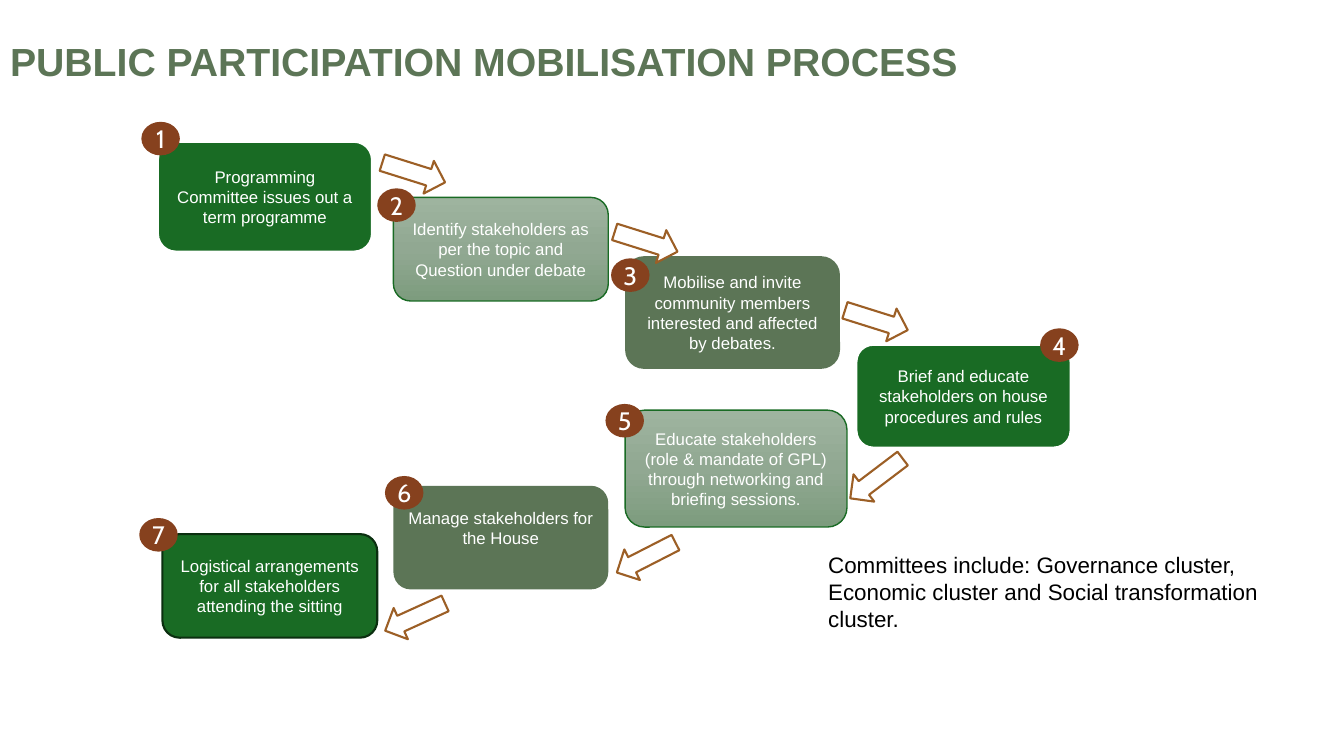
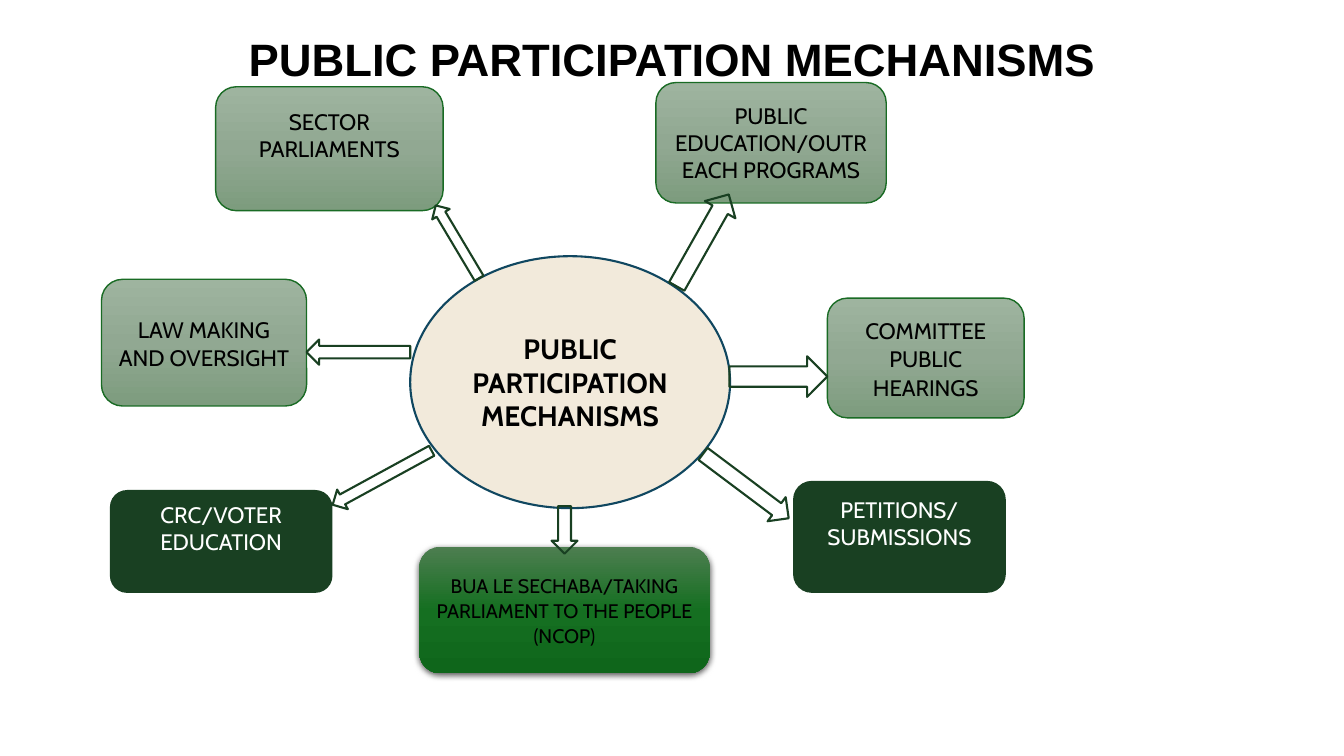
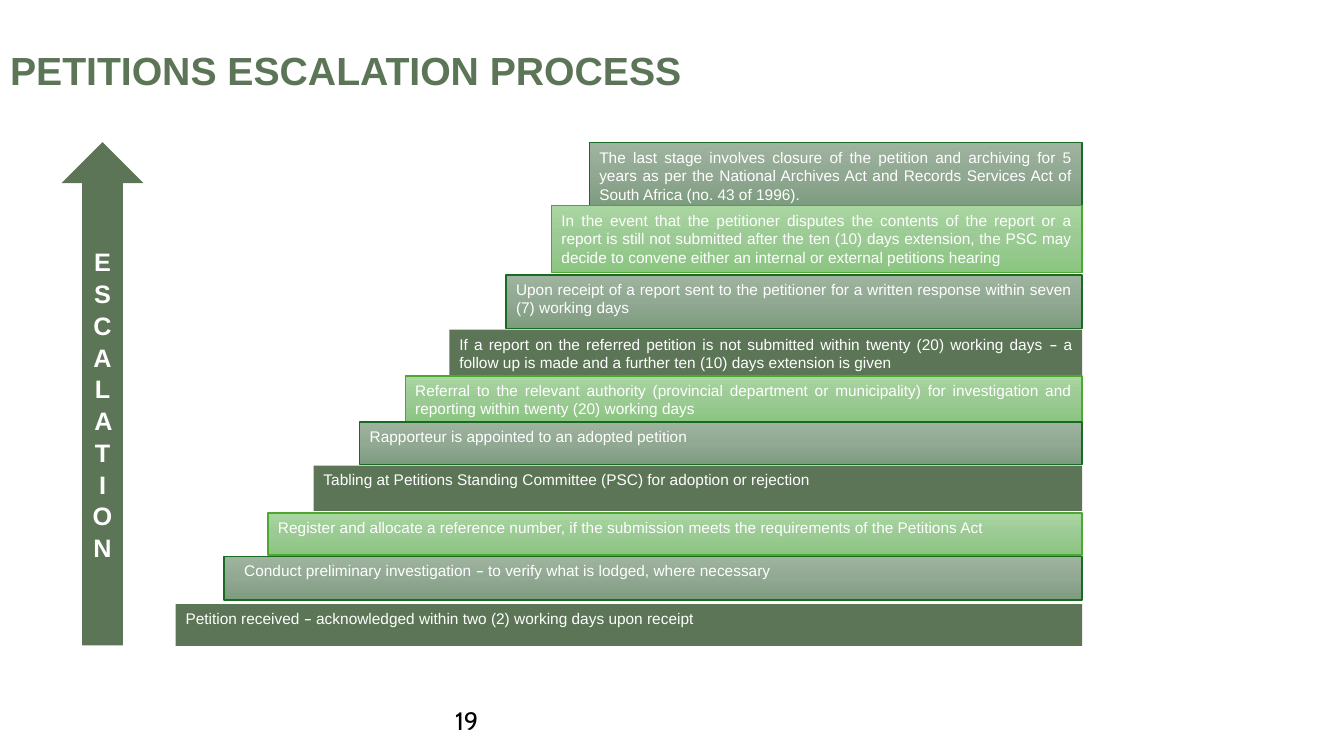
from dataclasses import dataclass

from pptx import Presentation
from pptx.dml.color import RGBColor
from pptx.enum import shapes as kinds, text as txt
from pptx.oxml import parse_xml
from pptx.oxml.ns import nsdecls, qn
from pptx.util import Pt


@dataclass(frozen=True)
class Theme:
    white: str = "FFFFFF"
    black: str = "000000"
    green: str = "196B24"
    dark_green: str = "0B2F10"
    forest: str = "194022"
    moss: str = "5C7556"
    lime: str = "4EA72E"
    rust: str = "86411E"
    ochre: str = "9C5F26"
    cream: str = "F2EADB"
    navy: str = "104760"
    sage_fade: tuple = ("9EB49F", "91A892", "7D9C7E")
    lime_fade: tuple = ("A8D5A0", "9CCA94", "8AC680")
    green_fade: tuple = ("4D7E50", "156F21", "0F661B")
    body_font: str = "Arial"
    accent_font: str = "Cabin"
    title: float = 28
    big_title: float = 32.4
    hub: float = 20
    label: float = 18
    mechanism: float = 16
    small_mechanism: float = 14
    step: float = 12
    stage: float = 11


T = Theme()
# Box styles: fill, line colour, line width
SAGE = (T.sage_fade, T.green, 1)
LIME = (T.lime_fade, T.lime, 1)
MOSS = (T.moss, None, 0)
GREEN = (T.green, T.white, 2)
GREEN_EDGED = (T.green, T.dark_green, 1.5)
FOREST = (T.forest, None, 0)
GLOSS = (T.green_fade, None, 0)

SHAPE = kinds.MSO_SHAPE
LEFT, CENTER, JUSTIFY = txt.PP_ALIGN.LEFT, txt.PP_ALIGN.CENTER, txt.PP_ALIGN.JUSTIFY
TOP, MIDDLE = txt.MSO_ANCHOR.TOP, txt.MSO_ANCHOR.MIDDLE


def add_block(slide, kind, box, style, rotation=0):
    """Add a preset shape; a tuple as fill means a top-to-bottom fade."""
    block = slide.shapes.add_shape(kind, *map(Pt, box))
    block.shadow.inherit = False
    block.rotation = rotation
    fill, line, width = style
    if fill is None:
        block.fill.background()
    elif isinstance(fill, tuple):
        stops = "".join(f'<a:gs pos="{i * 50000}"><a:srgbClr val="{color}"/></a:gs>'
                        for i, color in enumerate(fill))
        fade = parse_xml(f'<a:gradFill {nsdecls("a")} rotWithShape="1"><a:gsLst>{stops}</a:gsLst>'
                         '<a:lin ang="5400000" scaled="0"/></a:gradFill>')
        block._element.spPr.find(qn("a:prstGeom")).addnext(fade)
    else:
        block.fill.solid()
        block.fill.fore_color.rgb = RGBColor.from_string(fill)
    if line is None:
        block.line.fill.background()
    else:
        block.line.color.rgb = RGBColor.from_string(line)
        block.line.width = Pt(width)
    return block


def write(target, words, size, color, font=T.body_font, bold=False,
          align=CENTER, anchor=MIDDLE, spacing=None):
    """Fill a shape with one paragraph; a dash is set in the accent font."""
    frame = target.text_frame
    frame.word_wrap = True
    frame.auto_size = txt.MSO_AUTO_SIZE.NONE
    frame.vertical_anchor = anchor
    paragraph = frame.paragraphs[0]
    paragraph.alignment = align
    if spacing:
        paragraph.line_spacing = spacing
    paragraph.font.size = Pt(size)
    paragraph.font.name = font
    paragraph.font.bold = bold
    paragraph.font.color.rgb = RGBColor.from_string(color)
    for piece in words.partition("–"):
        if piece:
            run = paragraph.add_run()
            run.text = piece
            if piece == "–":
                run.font.name = T.accent_font
    return frame


deck = Presentation()
deck.slide_width, deck.slide_height = Pt(960), Pt(540)

# Slides and titles: text, box, size, colour, alignment, line spacing
titles = [
    ("PUBLIC PARTICIPATION MOBILISATION PROCESS", (0, 12, 960, 68.5), T.title, T.moss, LEFT, 0.85),
    ("PUBLIC PARTICIPATION MECHANISMS", (48, 21.5, 864, 46), T.big_title, T.black, CENTER, 0.9),
    ("PETITIONS ESCALATION PROCESS", (0, 21.5, 960, 60.5), T.title, T.moss, LEFT, 0.9),
]
pages = []
for words, box, size, color, align, spacing in titles:
    page = deck.slides.add_slide(deck.slide_layouts[5])
    heading = page.shapes.title
    heading.left, heading.top, heading.width, heading.height = map(Pt, box)
    write(heading, words, size, color, bold=True, align=align, spacing=spacing)
    pages.append(page)
mobilisation, mechanisms, escalation = pages

# Mobilisation: steps with box, style, badge position
steps = [
    ("Programming Committee issues out a term programme", (112.5, 101, 153.5, 79), GREEN, (101, 87)),
    ("Identify stakeholders as per the topic and Question under debate",
     (281, 141, 153.5, 74), SAGE, (269.5, 134.5)),
    ("Mobilise and invite community members interested and affected by debates.",
     (446.5, 183, 153.5, 80.5), MOSS, (436.5, 184.5)),
    ("Brief and educate stakeholders on house procedures and rules",
     (611.5, 246, 153.5, 74), GREEN, (743, 234.5)),
    ("Educate stakeholders (role & mandate of GPL) through networking and briefing sessions.",
     (446.5, 293, 158.5, 83.5), SAGE, (432.5, 288.5)),
    ("Manage stakeholders for the House", (281, 347, 153.5, 74), MOSS, (275, 340)),
    ("Logistical arrangements for all stakeholders attending the sitting",
     (116, 381.5, 153.5, 74), GREEN_EDGED, (99.5, 370)),
]
for words, box, style, _ in steps:
    step = add_block(mobilisation, SHAPE.ROUNDED_RECTANGLE, box, style)
    frame = write(step, words, T.step, T.white)
    if words.startswith("Manage"):
        frame.margin_bottom = Pt(17.5)

# Arrows from step to step: left, top, rotation
for left, top, turn in [(272, 111, 17.5), (438, 160.5, 17.5), (602.5, 216.5, 17.5),
                        (602.5, 329.5, 142.8), (438, 386, 152.9), (273, 428.5, 155.5)]:
    add_block(mobilisation, SHAPE.RIGHT_ARROW, (left, top, 47, 24.5), (T.white, T.ochre, 1.5), turn)

# Numbered badges
for number, (_, _, _, corner) in enumerate(steps, 1):
    badge = add_block(mobilisation, SHAPE.OVAL, (*corner, 27.5, 24), (T.rust, None, 0))
    frame = write(badge, str(number), T.label, T.white, T.accent_font)
    frame.margin_left = frame.margin_right = frame.margin_top = frame.margin_bottom = 0

# Committee note
committees = mobilisation.shapes.add_textbox(Pt(584.5), Pt(390), Pt(360), Pt(65.5))
write(committees, "Committees include: Governance cluster, Economic cluster and Social "
      "transformation cluster.", T.mechanism, T.black, align=LEFT, anchor=TOP)

# Mechanisms: box, style, size, text colour, line spacing, bottom margin
spokes = [
    ("PUBLIC EDUCATION/OUTREACH PROGRAMS", (468.5, 59, 164.5, 86), SAGE,
     T.mechanism, T.black, None, 3.6),
    ("PETITIONS/SUBMISSIONS", (566.5, 343.5, 152, 80), FOREST, T.mechanism, T.white, None, 23),
    ("CRC/VOTER EDUCATION", (78.5, 350, 159, 73.5), FOREST, T.mechanism, T.white, None, 23),
    ("SECTOR PARLIAMENTS", (154, 62, 162.5, 88.5), SAGE, T.mechanism, T.black, None, 23),
    ("COMMITTEE PUBLIC HEARINGS", (591, 213, 140.5, 85.5), SAGE,
     T.mechanism, T.black, 1.07, 3.6),
    ("BUA LE SECHABA/TAKING PARLIAMENT TO THE PEOPLE (NCOP)", (299.5, 390.5, 207.5, 90.5), GLOSS,
     T.small_mechanism, T.black, 1.07, 3.6),
    ("LAW MAKING AND OVERSIGHT", (72.5, 199.5, 146.5, 90.5), SAGE,
     T.mechanism, T.black, 1.07, 3.6),
]
for words, box, style, size, color, spacing, bottom in spokes:
    spoke = add_block(mechanisms, SHAPE.ROUNDED_RECTANGLE, box, style)
    frame = write(spoke, words, size, color, T.accent_font, spacing=spacing)
    frame.margin_bottom = Pt(bottom)
    if style is GLOSS:
        spoke._element.spPr.find(qn("a:effectLst")).append(parse_xml(
            f'<a:outerShdw {nsdecls("a")} blurRad="57150" dist="19050" dir="5400000" algn="ctr" '
            f'rotWithShape="0"><a:srgbClr val="{T.black}"><a:alpha val="63000"/></a:srgbClr>'
            '</a:outerShdw>'))

# Hub and its outward arrows
hub = add_block(mechanisms, SHAPE.OVAL, (293, 183, 228.5, 180), (T.cream, T.navy, 1.5))
write(hub, "PUBLIC PARTICIPATION MECHANISMS", T.hub, T.black, T.accent_font, bold=True)
for *box, turn in [
    (489.5, 134, 25, 75.5, 29.5), (541.5, 234, 29, 70, 90), (319.5, 142.5, 14.5, 60.5, 329.2),
    (247, 214.5, 18, 74, 270), (265, 301, 16, 80.5, 241.4), (394, 361.5, 18.5, 34, 180),
    (522, 309, 21.5, 76.5, 126.9),
]:
    add_block(mechanisms, SHAPE.UP_ARROW, box, (None, T.forest, 1.5), turn)

# Page number
page_number = escalation.shapes.add_textbox(Pt(318), Pt(500.5), Pt(324), Pt(29))
write(page_number, "19", T.label, T.black, T.accent_font, align=LEFT, anchor=TOP)

# Escalation staircase, last stage first: left, top, height, style; shared right edge
stair_right = 773
stages = [
    ("The last stage involves closure of the petition and archiving for 5 years as per the "
     "National Archives Act and Records Services Act of South Africa (no. 43 of 1996).",
     421, 102, 45, SAGE),
    ("In the event that the petitioner disputes the contents of the report or a report is still "
     "not submitted after the ten (10) days extension, the PSC may decide to convene either an "
     "internal or external petitions hearing", 394, 147, 47.5, LIME),
    ("Upon receipt of a report sent to the petitioner for a written response within seven (7) "
     "working days", 361.5, 196.5, 38, SAGE),
    ("If a report on the referred petition is not submitted within twenty (20) working days – a "
     "follow up is made and a further ten (10) days extension is given", 321, 235.5, 32.5, MOSS),
    ("Referral to the relevant authority (provincial department or municipality) for "
     "investigation and reporting within twenty (20) working days", 289.5, 268.5, 33, LIME),
    ("Rapporteur is appointed to an adopted petition", 257, 301.5, 30.5, SAGE),
    ("Tabling at Petitions Standing Committee (PSC) for adoption or rejection",
     224, 332.5, 32.5, MOSS),
    ("Register and allocate a reference number, if the submission meets the requirements of the "
     "Petitions Act", 191.5, 366.5, 30, LIME),
    ("Conduct preliminary investigation – to verify what is lodged, where necessary",
     160, 397.5, 31, SAGE),
    ("Petition received – acknowledged within two (2) working days upon receipt",
     125.5, 431.5, 30, MOSS),
]
for words, left, top, height, style in stages:
    stage = add_block(escalation, SHAPE.RECTANGLE, (left, top, stair_right - left, height), style)
    frame = write(stage, words, T.stage, T.white, align=JUSTIFY, anchor=TOP)
    if words.startswith("Conduct"):
        frame.margin_left = Pt(14.4)

# Upward arrow; its narrow shaft stacks the letters
climb = add_block(escalation, SHAPE.UP_ARROW, (44, 101.5, 58.5, 359.5), MOSS)
write(climb, "ESCALATION", T.label, T.white, bold=True, spacing=1.05)

deck.save("out.pptx")
